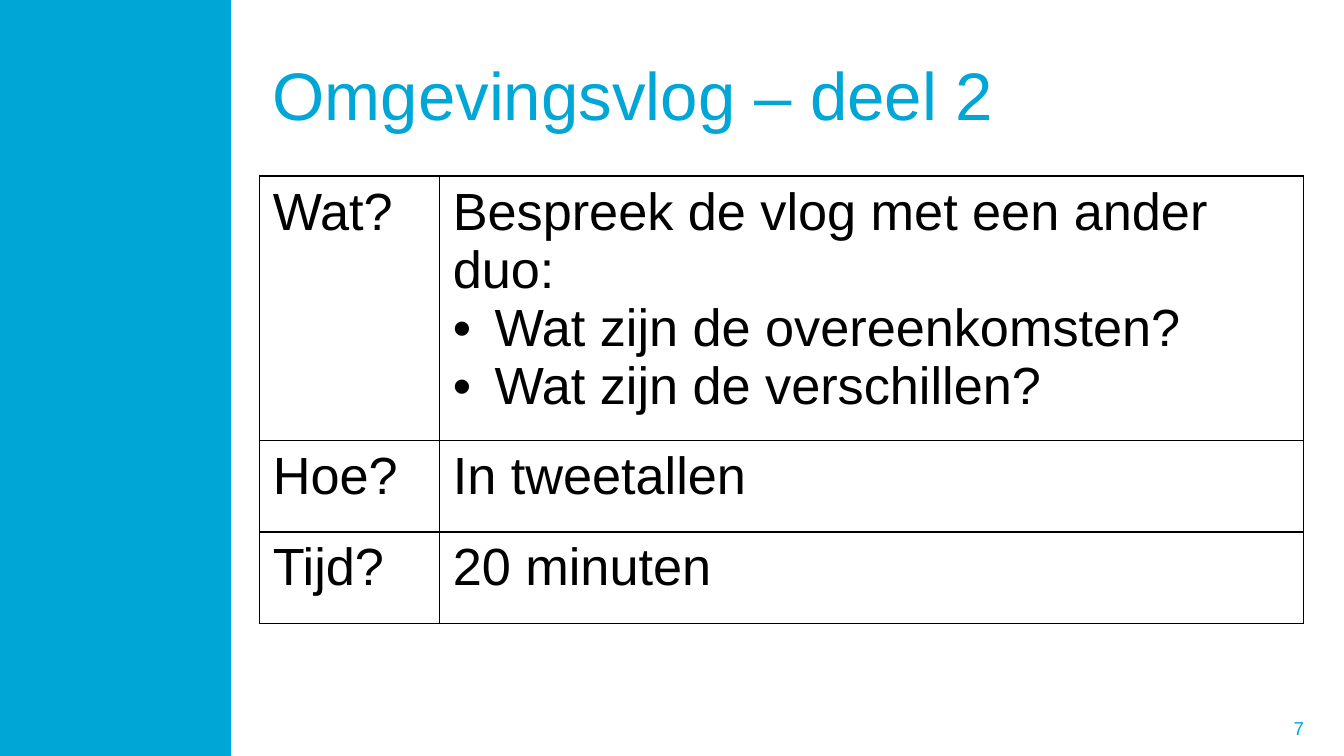
from lxml import etree
from pptx import Presentation
from pptx.dml.color import RGBColor
from pptx.enum import shapes, text
from pptx.oxml import ns
from pptx.util import Inches, Pt

CYAN, BLACK, WHITE = "00A6D6", "000000", "FFFFFF"
FONT = "Arial"
BULLET = "• "

# Rows of the assignment: label and the lines beside it
ASSIGNMENT = [
    ("Wat?", ["Bespreek de vlog met een ander duo:",
              BULLET + "Wat zijn de overeenkomsten?",
              BULLET + "Wat zijn de verschillen?"]),
    ("Hoe?", ["In tweetallen"]),
    ("Tijd?", ["20 minuten"]),
]
COLUMN_WIDTHS = [1.34, 6.43]
ROW_HEIGHTS = [1.17, 0.68, 0.68]  # the first row grows with its text


def color(hex_value):
    return RGBColor.from_string(hex_value)


def style(paragraph, size, hex_value):
    for run in paragraph.runs:
        run.font.name = FONT
        run.font.size = Pt(size)
        run.font.color.rgb = color(hex_value)


def add_label(slide, box, words, size, align=text.PP_ALIGN.LEFT):
    frame = slide.shapes.add_textbox(*map(Inches, box)).text_frame
    frame.word_wrap = True
    frame.vertical_anchor = text.MSO_ANCHOR.MIDDLE
    frame.text = words
    frame.paragraphs[0].alignment = align
    style(frame.paragraphs[0], size, CYAN)


def add_side_band(slide, width, height):
    band = slide.shapes.add_shape(shapes.MSO_SHAPE.RECTANGLE, 0, 0, width, height)
    band.shadow.inherit = False
    band.fill.solid()
    band.fill.fore_color.rgb = color(CYAN)
    band.line.fill.background()


def add_bullet(paragraph):
    props = paragraph._p.get_or_add_pPr()
    props.set("marL", str(Inches(0.31)))
    props.set("indent", str(-Inches(0.31)))
    etree.SubElement(props, ns.qn("a:buFont"), typeface=FONT)
    etree.SubElement(props, ns.qn("a:buChar"), char=BULLET.strip())


def add_borders(cell):
    props = cell._tc.get_or_add_tcPr()
    for position, side in enumerate(("lnL", "lnR", "lnT", "lnB")):
        line = etree.Element(ns.qn("a:" + side), w=str(Pt(1)))
        fill = etree.SubElement(line, ns.qn("a:solidFill"))
        etree.SubElement(fill, ns.qn("a:srgbClr"), val=BLACK)
        props.insert(position, line)


def fill_cell(cell, lines):
    cell.fill.solid()
    cell.fill.fore_color.rgb = color(WHITE)
    add_borders(cell)
    cell.text_frame.text = "\n".join(line.removeprefix(BULLET) for line in lines)
    for line, paragraph in zip(lines, cell.text_frame.paragraphs):
        if line.startswith(BULLET):
            add_bullet(paragraph)
        style(paragraph, 28, BLACK)


def add_assignment(slide, box):
    frame = slide.shapes.add_table(len(ROW_HEIGHTS), len(COLUMN_WIDTHS),
                                   *map(Inches, box))
    table = frame.table
    table.first_row = table.horz_banding = False
    for column, width in zip(table.columns, COLUMN_WIDTHS):
        column.width = Inches(width)
    for row, height, (label, lines) in zip(table.rows, ROW_HEIGHTS, ASSIGNMENT):
        row.height = Inches(height)
        fill_cell(row.cells[0], [label])
        fill_cell(row.cells[1], lines)
    # Row heights reset the frame, so its full height is set last
    frame.height = Inches(box[3])


def main():
    deck = Presentation()
    deck.slide_width = Inches(10)
    deck.slide_height = deck.slide_width * 9 // 16
    slide = deck.slides.add_slide(deck.slide_layouts[6])

    # Slide number and side band
    add_label(slide, (7.27, 5.27, 2.53, 0.3), "7", 10, text.PP_ALIGN.RIGHT)
    add_side_band(slide, Inches(1.72), deck.slide_height)

    # Title and assignment
    add_label(slide, (1.93, 0.23, 7.77, 0.94), "Omgevingsvlog – deel 2", 36)
    add_assignment(slide, (1.93, 1.31, 7.77, 3.32))

    deck.save("out.pptx")


if __name__ == "__main__":
    main()
